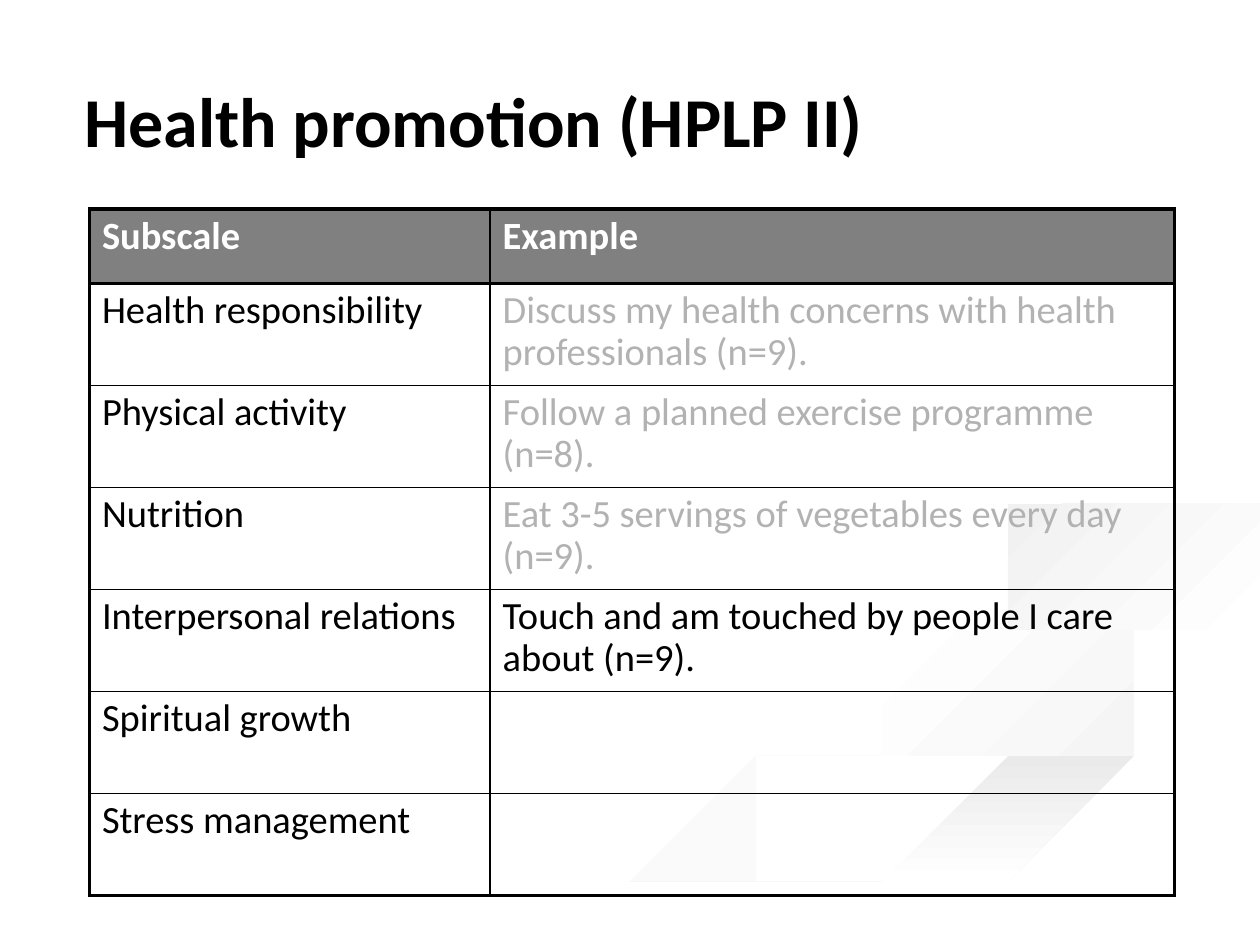
from dataclasses import dataclass
from typing import Optional

from lxml.etree import SubElement
from pptx import Presentation
from pptx.dml.color import RGBColor
from pptx.enum.text import MSO_ANCHOR as Anchor
from pptx.oxml.ns import qn
from pptx.util import Inches, Pt

COLORS = {
    "ink": "000000", "paper": "FFFFFF", "faded": "B2B2B2", "header": "808080",
    "pale": "F5F5F5", "mist": "F1F1F1", "silver": "EAEAEA",
}
FONT = "Calibri"
THICK, THIN = 2.25, 1
STEPS = 6

Points = list[tuple[float, float]]


@dataclass
class Ribbon:
    edges: list[Points]
    start: str
    end: Optional[str] = None
    angle: int = 0


@dataclass
class Row:
    subscale: str
    example: str = ""
    example_color: str = "faded"


WAVE = [(7.24, 4.64), (7.59, 4.98), (8.31, 5.19), (9.05, 5.4), (9.43, 5.7)]
ROAD = [(5.03, 7.49), (6.3, 6.93), (7.64, 6.47), (9.36, 6.02), (9.99, 5.81)]
CREST = [(7.81, 4.6), (8.22, 4.34), (8.99, 4.18), (9.99, 4.02)]

RIBBONS = [
    Ribbon([
        [(5.75, 4.59), (5.94, 4.85), (6.82, 5.19), (7.67, 5.47), (8, 5.81),
         (7.4, 6.18), (5.32, 6.74), (3.61, 7.49)],
        [(3, 7.49), (4.58, 6.74), (6.84, 6.13), (7.86, 5.66), (7.41, 5.39),
         (6.31, 5.05), (5.72, 4.76), (5.75, 4.59)],
    ], "paper", "pale"),
    Ribbon([
        WAVE,
        [(9.43, 5.7), (9.25, 5.93), (8.94, 6.05)],
        [(8.94, 6.05), (9.18, 5.81), (8.8, 5.49), (7.97, 5.24), (7.33, 4.88), (7.24, 4.64)],
    ], "paper", "pale", 45),
    Ribbon([ROAD, [(9.99, 6.09), (8.21, 6.51), (6.7, 7.02), (5.71, 7.49)]],
           "silver", "paper", 90),
    Ribbon([
        WAVE,
        [(9.43, 5.7), (8.92, 6.05), (7.43, 6.43), (6.19, 6.84), (4.77, 7.49)],
        ROAD,
        [(9.99, 5.38), (8.66, 5.09), (7.94, 4.8), (7.81, 4.6)],
        CREST,
        [(9.99, 3.87), (8.74, 4.08), (7.55, 4.32), (7.24, 4.64)],
    ], "paper"),
    Ribbon([
        CREST[::-1],
        [(7.81, 4.6), (7.97, 4.83), (8.26, 4.96)],
        [(8.26, 4.96), (8.05, 4.72), (8.43, 4.48), (9.36, 4.29), (9.99, 4.2)],
    ], "mist", "paper", 45),
]

ROWS = [
    Row("Health responsibility", "Discuss my health concerns with health professionals (n=9)."),
    Row("Physical activity", "Follow a planned exercise programme (n=8)."),
    Row("Nutrition", "Eat 3-5 servings of vegetables every day (n=9)."),
    Row("Interpersonal relations", "Touch and am touched by people I care about (n=9).", "ink"),
    Row("Spiritual growth"),
    Row("Stress management"),
]


def rgb(name: str) -> RGBColor:
    return RGBColor.from_string(COLORS[name])


def spline(before: float, start: float, end: float, after: float, t: float) -> float:
    pull_out, pull_in = (end - before) / 2, (after - start) / 2
    gap = end - start
    bend = 3 * gap - 2 * pull_out - pull_in
    twist = pull_out + pull_in - 2 * gap
    return start + t * (pull_out + t * (bend + t * twist))


def smooth(edge: Points) -> Points:
    padded = [edge[0], *edge, edge[-1]]
    curve = [
        tuple(spline(*axis, step / STEPS) for axis in zip(*padded[index:index + 4]))
        for index in range(len(edge) - 1)
        for step in range(STEPS)
    ]
    return [*curve, edge[-1]]


def write(frame, text: str, *, size: float, color: str = "ink", bold: bool = False,
          line: float = 1.0) -> None:
    para = frame.paragraphs[0]
    para.line_spacing = line
    para.font.size = Pt(size)
    if text:
        span = para.add_run()
        span.text = text
        span.font.name = FONT
        span.font.size = Pt(size)
        span.font.bold = bold
        span.font.color.rgb = rgb(color)


def draw_ribbon(page, ribbon: Ribbon) -> None:
    first, *rest = [point for edge in ribbon.edges for point in smooth(edge)]
    builder = page.shapes.build_freeform(*first, scale=Inches(1))
    builder.add_line_segments(rest, close=True)
    shape = builder.convert_to_shape()
    shape.shadow.inherit = False
    shape.line.fill.background()
    if ribbon.end is None:
        shape.fill.solid()
        shape.fill.fore_color.rgb = rgb(ribbon.start)
        return
    shape.fill.gradient()
    shape.fill.gradient_angle = 360 - ribbon.angle
    for stop, name in zip(shape.fill.gradient_stops, (ribbon.start, ribbon.end)):
        stop.color.rgb = rgb(name)


def set_borders(cell, **widths: float) -> None:
    properties = cell._tc.get_or_add_tcPr()
    for side in "LRTB":
        border = SubElement(properties, qn(f"a:ln{side}"), w=str(int(Pt(widths[side]))))
        fill = SubElement(border, qn("a:solidFill"))
        SubElement(fill, qn("a:srgbClr"), val=COLORS["ink"])


def draw_table(page, rows: list[Row]) -> None:
    frame = page.shapes.add_table(len(rows) + 1, 2, Inches(0.71), Inches(1.66),
                                  Inches(8.61), Inches(5.45))
    table = frame.table
    table.first_row = table.horz_banding = False
    for column, width in zip(table.columns, (3.18, 5.43)):
        column.width = Inches(width)
    for index, row in enumerate([Row("Subscale", "Example", "paper"), *rows]):
        header = index == 0
        table.rows[index].height = Inches(0.59 if header else 0.81)
        texts = ((row.subscale, "paper" if header else "ink"), (row.example, row.example_color))
        for position, (text, color) in enumerate(texts):
            cell = table.cell(index, position)
            set_borders(cell,
                        L=THICK if position == 0 else THIN,
                        R=THICK if position == 1 else THIN,
                        T=THICK if index <= 1 else THIN,
                        B=THICK if index in (0, len(rows)) else THIN)
            if header:
                cell.fill.solid()
                cell.fill.fore_color.rgb = rgb("header")
            else:
                cell.fill.background()
            write(cell.text_frame, text, size=22, color=color, bold=header, line=0.9)


def draw_title(page, text: str) -> None:
    box = page.shapes.add_textbox(Inches(0.67), Inches(0.28), Inches(7.43), Inches(1))
    frame = box.text_frame
    frame.word_wrap = True
    frame.vertical_anchor = Anchor.BOTTOM
    frame.margin_left = frame.margin_right = frame.margin_top = frame.margin_bottom = 0
    write(frame, text, size=40, bold=True)


def main() -> None:
    deck = Presentation()
    deck.slide_width, deck.slide_height = Inches(10), Inches(7.5)
    page = deck.slides.add_slide(deck.slide_layouts[6])
    for ribbon in RIBBONS:
        draw_ribbon(page, ribbon)
    draw_title(page, "Health promotion (HPLP II)")
    draw_table(page, ROWS)
    deck.save("out.pptx")


if __name__ == "__main__":
    main()
